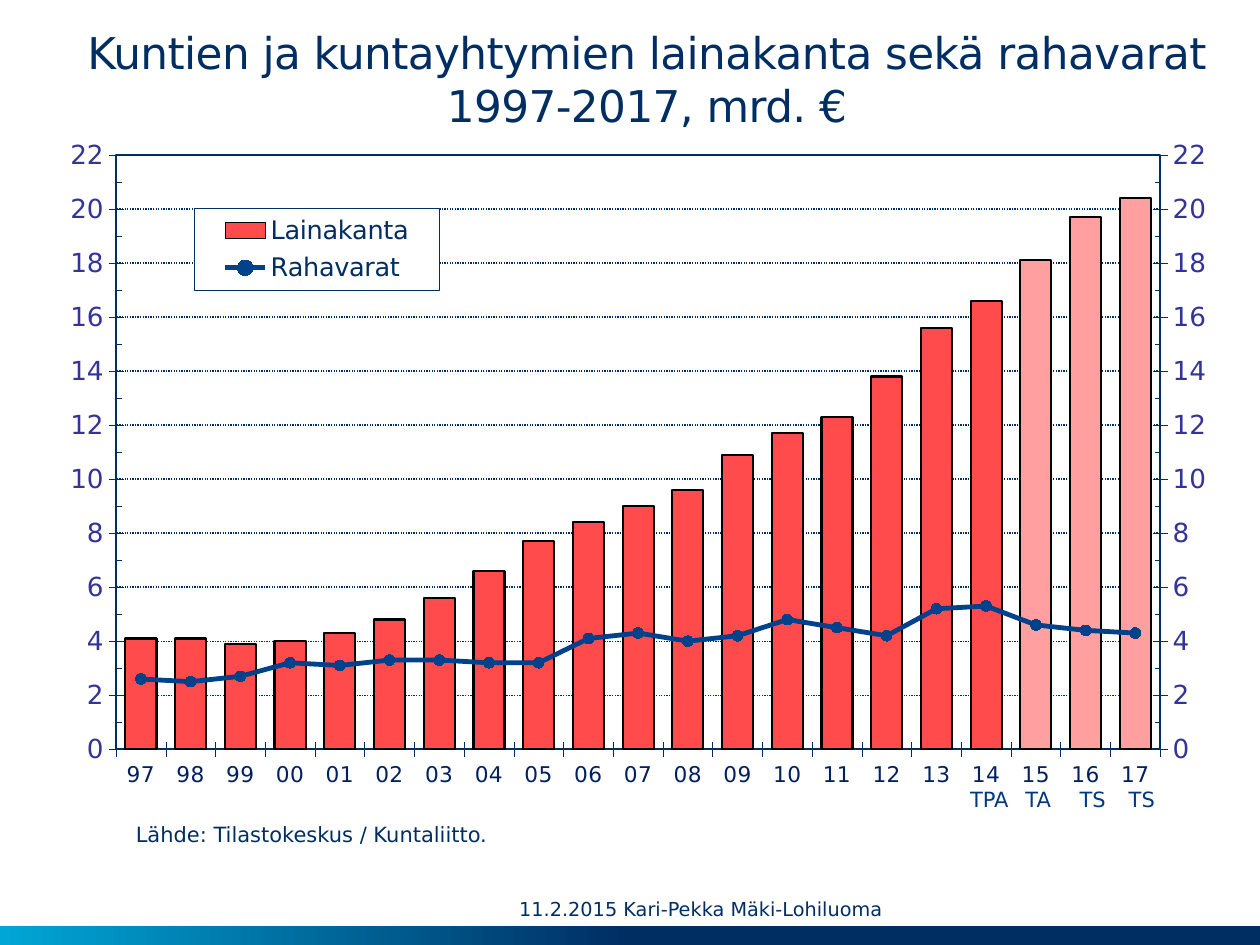
import copy

import pptx
import pptx.chart.data
import pptx.dml.color
import pptx.enum.chart
import pptx.enum.dml
import pptx.enum.shapes
import pptx.enum.text
import pptx.oxml
import pptx.oxml.ns
import pptx.util
from pptx.util import Inches

Pt = pptx.util.Pt
rgb = pptx.dml.color.RGBColor.from_string
TickMark = pptx.enum.chart.XL_TICK_MARK
Anchor = pptx.enum.text.MSO_ANCHOR
AutoSize = pptx.enum.text.MSO_AUTO_SIZE

THEME = {
    "font": "DejaVu Sans",
    "navy": "002E63", "cyan": "00A6D6", "label": "003882",
    "years": "002060", "scale": "333399",
    "debt": "FF4B4B", "forecast": "FF9F9F", "cash": "00418C",
    "black": "000000", "white": "FFFFFF",
    "title_size": 25, "scale_size": 15, "legend_size": 14.6,
    "years_size": 12.4, "note_size": 12, "footer_size": 11,
}
CHART_NS = pptx.oxml.ns.nsdecls("c", "a")


def style_font(font, size, color):
    for name, value in {"name": THEME["font"], "size": Pt(THEME[size]), "bold": False}.items():
        setattr(font, name, value)
    font.color.rgb = rgb(THEME[color])


def place_and_outline(part, layout_index, box, width, fill="<a:noFill/>", target=""):
    """Give a chart part a manual layout (fractions of the chart) and a navy outline."""
    for old in part.xpath("c:layout | c:spPr"):
        part.remove(old)
    modes = "".join(f'<c:{side}Mode val="edge"/>' for side in "xy")
    sizes = "".join(f'<c:{key} val="{value}"/>' for key, value in zip("xywh", box))
    part.insert(layout_index, pptx.oxml.parse_xml(
        f"<c:layout {CHART_NS}><c:manualLayout>{target}{modes}{sizes}</c:manualLayout></c:layout>"))
    outline = pptx.oxml.parse_xml(
        f'<c:spPr {CHART_NS}>{fill}<a:ln w="{Pt(width)}"><a:solidFill>'
        f'<a:srgbClr val="{THEME["navy"]}"/></a:solidFill></a:ln></c:spPr>')
    text_style = part.xpath("c:txPr")
    if text_style:
        text_style[0].addprevious(outline)
    else:
        part.append(outline)


deck = pptx.Presentation()
deck.slide_width, deck.slide_height = Inches(10), Inches(7.5)
slide = deck.slides.add_slide(deck.slide_layouts[5])

# Bottom band
band = slide.shapes.add_shape(pptx.enum.shapes.MSO_SHAPE.RECTANGLE,
                              Inches(0), Inches(7.35), Inches(10), Inches(0.15))
band.shadow.inherit = False
band.line.fill.background()
band.fill.gradient()
band.fill.gradient_angle = 180
for stop, (position, color) in zip(band.fill.gradient_stops, [(0.5, "navy"), (1, "cyan")]):
    stop.position = position
    stop.color.rgb = rgb(THEME[color])

# Title
title = slide.shapes.title
title_box = {"left": 0.43, "top": 0.21, "width": 9.41, "height": 0.88}
for name, value in title_box.items():
    setattr(title, name, Inches(value))
title_format = {"margin_left": 0, "margin_right": 0, "margin_top": Inches(0.05),
                "margin_bottom": Inches(0.05), "word_wrap": True,
                "auto_size": AutoSize.NONE, "vertical_anchor": Anchor.BOTTOM}
for name, value in title_format.items():
    setattr(title.text_frame, name, value)
heading = title.text_frame.paragraphs[0]
heading.text = "Kuntien ja kuntayhtymien lainakanta sekä rahavarat\v1997-2017, mrd. €"
heading.alignment = pptx.enum.text.PP_ALIGN.CENTER
for run in heading.runs:
    style_font(run.font, "title_size", "navy")
    run.font._element.set("spc", "-30")

# Chart data
figures = pptx.chart.data.CategoryChartData(number_format="0.0")
figures.categories = [f"{year % 100:02d}" for year in range(1997, 2018)]
figures.add_series("Lainakanta", [4.1, 4.1, 3.9, 4, 4.3, 4.8, 5.6, 6.6, 7.7, 8.4, 9, 9.6, 10.9,
                                  11.7, 12.3, 13.8, 15.6, 16.6, 18.1, 19.7, 20.4])
figures.add_series("Rahavarat", [2.6, 2.5, 2.7, 3.2, 3.1, 3.3, 3.3, 3.2, 3.2, 4.1, 4.3, 4, 4.2,
                                 4.8, 4.5, 4.2, 5.2, 5.3, 4.6, 4.4, 4.3])
chart = slide.shapes.add_chart(
    pptx.enum.chart.XL_CHART_TYPE.COLUMN_CLUSTERED,
    Inches(0.43), Inches(1.05), Inches(9.27), Inches(5.46), figures).chart
chart.has_title = False
style_font(chart.font, "scale_size", "navy")

# Left and bottom axes
years, scale = chart.category_axis, chart.value_axis
scale_format = {"minimum_scale": 0, "maximum_scale": 22, "major_unit": 2, "minor_unit": 1,
                "minor_tick_mark": TickMark.INSIDE, "has_major_gridlines": True}
for name, value in scale_format.items():
    setattr(scale, name, value)
scale.tick_labels.number_format = "0"
scale.tick_labels.number_format_is_linked = False
for axis, kind in [(years, "years"), (scale, "scale")]:
    axis.major_tick_mark = TickMark.CROSS
    axis.format.line.color.rgb = rgb(THEME["navy"])
    axis.format.line.width = Pt(0.31)
    style_font(axis.tick_labels.font, f"{kind}_size", kind)
grid = scale.major_gridlines.format.line
grid.color.rgb = rgb(THEME["navy"])
grid.width = Pt(0.75)
grid.dash_style = pptx.enum.dml.MSO_LINE.ROUND_DOT

# Cash series becomes a line on its own right-hand axis
plot_area = chart.element.xpath("//c:plotArea")[0]
bars = plot_area.xpath("c:barChart")[0]
cash_series = bars.xpath("c:ser")[1]
for flag in cash_series.xpath("c:invertIfNegative"):
    cash_series.remove(flag)
line_group = pptx.oxml.parse_xml(
    f'<c:lineChart {CHART_NS}><c:grouping val="standard"/><c:varyColors val="0"/>'
    '<c:marker val="1"/><c:axId val="5001"/><c:axId val="5002"/></c:lineChart>')
line_group.insert(2, cash_series)
bars.addnext(line_group)

right_scale = copy.deepcopy(plot_area.xpath("c:valAx")[0])
hidden_years = copy.deepcopy(plot_area.xpath("c:catAx")[0])
plot_area.xpath("c:valAx")[0].addnext(right_scale)
right_scale.addnext(hidden_years)
right_scale.remove(right_scale.xpath("c:majorGridlines")[0])
for axis, settings in [
    (right_scale, {"axId": "5002", "crossAx": "5001", "axPos": "r", "crosses": "max"}),
    (hidden_years, {"axId": "5001", "crossAx": "5002", "delete": "1"}),
]:
    for tag, value in settings.items():
        axis.xpath(f"c:{tag}")[0].set("val", value)

# Series looks
columns, cash_line = chart.plots
columns.gap_width = 60
columns.vary_by_categories = False
debt = columns.series[0]
for item, color in [(debt, "debt")] + [(debt.points[i], "forecast") for i in (18, 19, 20)]:
    item.format.fill.solid()
    item.format.fill.fore_color.rgb = rgb(THEME[color])
    item.format.line.color.rgb = rgb(THEME["black"])
    item.format.line.width = Pt(1.25)
cash = cash_line.series[0]
cash.smooth = False
cash.format.line.color.rgb = rgb(THEME["cash"])
cash.format.line.width = Pt(2.75)
cash.marker.style = pptx.enum.chart.XL_MARKER_STYLE.CIRCLE
cash.marker.size = 6
cash.marker.format.fill.solid()
cash.marker.format.fill.fore_color.rgb = rgb(THEME["cash"])
cash.marker.format.line.color.rgb = rgb(THEME["cash"])

# Legend and plot frame
chart.has_legend = True
chart.legend.include_in_layout = True
style_font(chart.legend.font, "legend_size", "navy")
white_fill = f'<a:solidFill><a:srgbClr val="{THEME["white"]}"/></a:solidFill>'
place_and_outline(chart.element.xpath("//c:legend")[0], 1, (0.12, 0.11, 0.21, 0.12), 0.31,
                  fill=white_fill)
place_and_outline(plot_area, 0, (0.053, 0.033, 0.894, 0.864), 1.25,
                  target='<c:layoutTarget val="inner"/>')

# Source, footer and the notes under the last years
notes = [
    ("Lähde: Tilastokeskus / Kuntaliitto.", 0.98, 6.47, 3.23, "note_size", "navy"),
    ("11.2.2015 Kari-Pekka Mäki-Lohiluoma", 4.12, 7.06, 3.39, "footer_size", "navy"),
    ("TPA", 7.6, 6.19, 0.52, "note_size", "label"),
    ("TA", 8.04, 6.19, 0.41, "note_size", "label"),
    ("TS", 8.47, 6.19, 0.42, "note_size", "label"),
    ("TS", 8.86, 6.19, 0.42, "note_size", "label"),
]
for text, left, top, width, size, color in notes:
    frame = slide.shapes.add_textbox(Inches(left), Inches(top), Inches(width), Inches(0.3)).text_frame
    frame.word_wrap = color == "navy"
    if size == "footer_size":
        frame.vertical_anchor = Anchor.MIDDLE
        for side in ("left", "right", "top", "bottom"):
            setattr(frame, f"margin_{side}", 0)
    else:
        frame.auto_size = AutoSize.SHAPE_TO_FIT_TEXT
    run = frame.paragraphs[0].add_run()
    run.text = text
    style_font(run.font, size, color)

deck.save("out.pptx")
